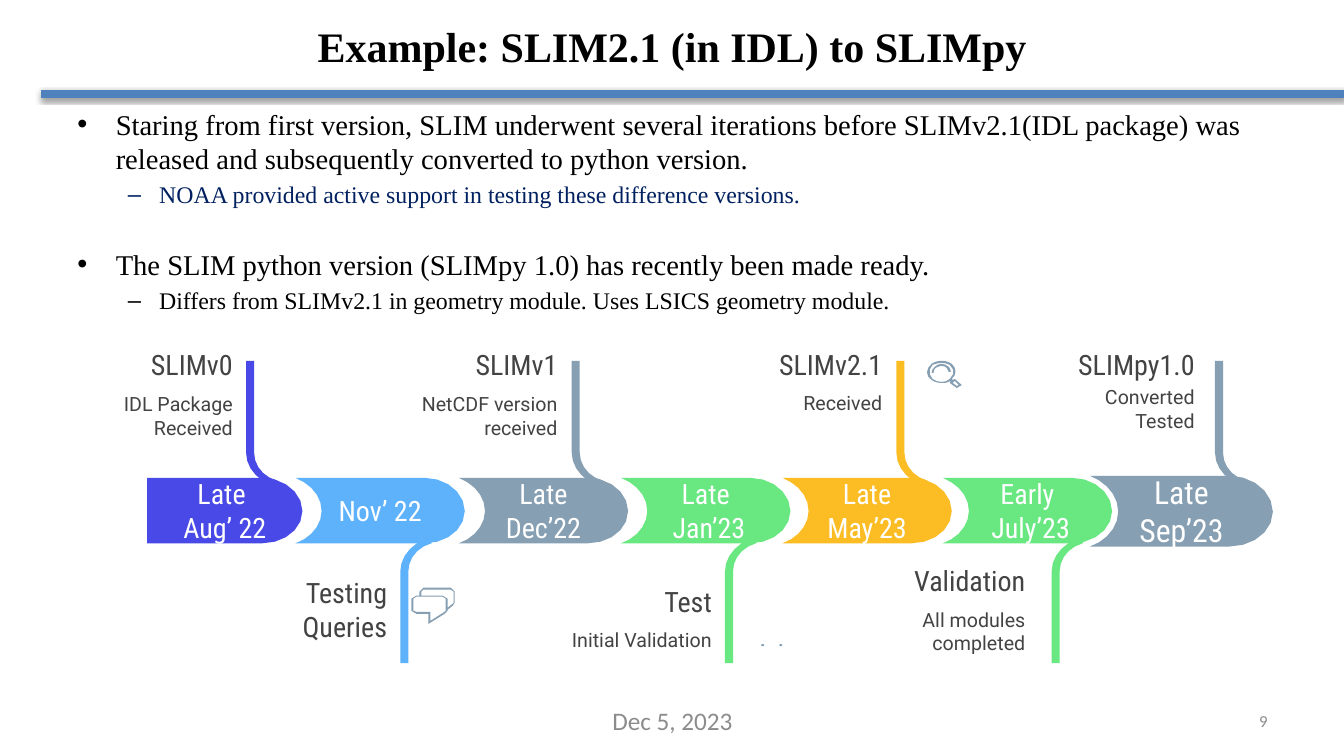
from math import dist

from lxml import etree
from pptx import Presentation
from pptx.dml.color import RGBColor
from pptx.enum.shapes import MSO_CONNECTOR, MSO_SHAPE
from pptx.enum.text import MSO_ANCHOR, PP_ALIGN
from pptx.oxml.ns import qn
from pptx.util import Inches, Pt

LEFT, MID, RIGHT = PP_ALIGN.LEFT, PP_ALIGN.CENTER, PP_ALIGN.RIGHT
TOP, CENTRE = MSO_ANCHOR.TOP, MSO_ANCHOR.MIDDLE
OVAL, LINE = MSO_SHAPE.OVAL, MSO_CONNECTOR.STRAIGHT
SERIF, SANS, SLIM = "Times New Roman", "Roboto", "Roboto Condensed"
SLATE, GREEN, DARK, GREY = "869FB2", "69E781", "434343", "8C8C8C"

# Outlines in inches: a pair is a corner, six numbers are a cubic curve
STEM = [(0, 0), (0, .91), (0, 1.05, .1, 1.17, .24, 1.23), (.31, 1.23),
        (.31, 1.19), (.17, 1.15, .08, 1.04, .08, .91), (.08, 0)]
NOTCH = [(0, 0), (.15, .06, .26, .18, .26, .33),
         (.26, .47, .15, .6, 0, .65)]
FLAT = [(.14, 0), (.14, .65)]
NOSE = [(1.28, .65), (1.5, .65, 1.68, .51, 1.68, .33),
        (1.68, .15, 1.5, 0, 1.28, 0)]
GLINT = [(.16, .03), (.13, .03, .11, .04, .09, .06),
         (.07, .07, .06, .1, .06, .12), (.08, .12),
         (.08, .1, .08, .08, .1, .07), (.12, .06, .14, .05, .16, .05),
         (.18, .05, .2, .06, .21, .07), (.23, .08, .23, .09, .23, .11),
         (.25, .11), (.25, .09, .24, .07, .23, .06),
         (.21, .04, .18, .03, .16, .03)]
LENS = [
    [(.16, .02), (.19, .02, .22, .03, .24, .04),
     (.29, .08, .29, .14, .24, .18), (.22, .2, .19, .21, .16, .21),
     (.13, .21, .1, .2, .07, .18), (.03, .14, .03, .08, .07, .04),
     (.1, .03, .13, .02, .16, .02)],
    [(.29, .2), (.33, .24), (.31, .25), (.27, .22)],
    [(.16, 0), (.12, 0, .09, .01, .06, .03), (0, .08, 0, .15, .06, .19),
     (.09, .21, .12, .22, .16, .22), (.19, .22, .22, .22, .25, .2),
     (.24, .22), (.31, .27), (.36, .24), (.29, .18), (.27, .19),
     (.26, .18), (.31, .14, .31, .07, .26, .03),
     (.23, .01, .2, 0, .16, 0)]]
CHAT = [
    [(.39, .02), (.42, .04), (.42, .15), (.41, .16), (.36, .2), (.36, .11),
     (.31, .08), (.1, .08), (.1, .04), (.12, .02)],
    [(.31, .09), (.34, .11), (.34, .23), (.33, .24), (.19, .33),
     (.19, .24), (.05, .24), (.02, .23), (.02, .11), (.05, .09)],
    [(.12, 0), (.08, .04), (.08, .08), (.05, .08), (0, .11), (0, .23),
     (.05, .26), (.17, .26), (.17, .36), (.33, .26), (.36, .23),
     (.36, .22), (.41, .18), (.43, .15), (.43, .04), (.39, 0)]]

# date, colour, band left, stem left, up, text right,
# heading, its top, note, its top
STEPS = [
    ("Late \nAug’ 22", "4949E7", 1.32, 2.44, True, 2.44,
     "SLIMv0", 3.38, "IDL Package Received", 3.76),
    ("Nov’ 22", "5EB2FC", 2.93, 3.97, False, 3.97,
     "Testing\nQueries", 5.81, "", 0),
    ("Late\nDec’22", SLATE, 4.55, 5.67, True, 5.66,
     "SLIMv1", 3.38, "NetCDF version received", 3.76),
    ("Late\n Jan’23", GREEN, 6.16, 7.19, False, 7.19,
     "Test", 5.73, "Initial Validation", 6.11),
    ("Late\nMay’23", "FCBD24", 7.76, 8.89, True, 8.88,
     "SLIMv2.1", 3.38, "Received", 3.76),
    ("Early\n July’23", GREEN, 9.35, 10.43, False, 10.3,
     "Validation", 5.52, "All modules completed", 5.9),
    ("Late\nSep’23", SLATE, 10.81, 12.05, True, 11.98,
     "SLIMpy1.0", 3.38, "Converted\nTested", 3.69)]

# text, size, colour, level, space before
BODY = [
    ("Staring from first version, SLIM underwent several iterations before "
     "SLIMv2.1(IDL package) was released and subsequently converted to "
     "python version.", 20.4, "000000", 0, 0),
    ("NOAA provided active support in testing these difference versions.",
     17, "002060", 1, 3.4),
    ("The SLIM python version (SLIMpy 1.0) has recently been made ready.",
     20.4, "000000", 0, 27),
    ("Differs from SLIMv2.1 in geometry module. Uses LSICS geometry module.",
     17, "000000", 1, 3.4)]


def paint(target, color):
    target.solid()
    target.fore_color.rgb = RGBColor.from_string(color)


def style(par, face, size, color, bold=False):
    for run in par.runs:
        run.font.name, run.font.size, run.font.bold = face, Pt(size), bold
        paint(run.font.fill, color)


def write(shape, text, face, size, color, align, anchor, pad=None, bold=False):
    frame = shape.text_frame
    frame.word_wrap, frame.vertical_anchor = True, anchor
    if pad is not None:
        frame.margin_left = frame.margin_right = Inches(pad)
        frame.margin_top = frame.margin_bottom = Inches(pad)
    frame.text = text
    for par in frame.paragraphs:
        par.alignment = align
        style(par, face, size, color, bold)


def label(slide, box, *args, **opts):
    write(slide.shapes.add_textbox(*map(Inches, box)), *args, **opts)


def finish(shape, color):
    shape.shadow.inherit = False
    paint(shape.fill, color)
    shape.line.fill.background()


def trace(parts):
    """Turn corners and cubic curves into points, more for longer curves."""
    points = []
    for part in parts:
        if len(part) == 2:
            points.append(part)
            continue
        start, ctrl = points[-1], (part[:2], part[2:4], part[4:])
        count = min(5, 1 + int(20 * dist(start, ctrl[2])))
        for step in range(1, count + 1):
            t = step / count
            u = 1 - t
            points.append(tuple(
                u**3 * start[k] + 3 * u * u * t * ctrl[0][k]
                + 3 * u * t * t * ctrl[1][k] + t**3 * ctrl[2][k]
                for k in (0, 1)))
    return points


def outline(slide, rings, left, top, color, wide=1, tall=1):
    pen = None
    for ring in rings:
        points = [(Inches(left + wide * x), Inches(top + tall * y))
                  for x, y in trace(ring)]
        if pen is None:
            pen = slide.shapes.build_freeform(*points[0])
        else:
            pen.move_to(*points[0])
        pen.add_line_segments(points[1:], close=True)
    shape = pen.convert_to_shape()
    finish(shape, color)
    return shape


def rule(slide):
    bar = slide.shapes.add_connector(
        LINE, Inches(.41), Inches(.93), Inches(13.33), Inches(.93))
    paint(bar.line.fill, "4F81BD")
    bar.line.width = Pt(6)
    glow = etree.SubElement(bar._element.spPr, qn("a:effectLst"))
    shade = etree.SubElement(glow, qn("a:outerShdw"), blurRad=str(Pt(3.1)),
                             dist=str(Pt(1.6)), dir="5400000", rotWithShape="0")
    tint = etree.SubElement(shade, qn("a:srgbClr"), val="000000")
    etree.SubElement(tint, qn("a:alpha"), val="38000")


def bullets(slide):
    box = slide.shapes.add_textbox(*map(Inches, (.67, 1.01, 12, 1.93)))
    frame = box.text_frame
    frame.word_wrap = True
    for i, (text, size, color, level, gap) in enumerate(BODY):
        par = frame.add_paragraph() if i else frame.paragraphs[0]
        par.text, par.level, par.alignment = text, level, LEFT
        props = par._p.get_or_add_pPr()
        props.set("marL", str(Inches((.38, .81)[level])))
        props.set("indent", str(Inches((-.38, -.31)[level])))
        etree.SubElement(props, qn("a:buFont"), typeface="Arial")
        etree.SubElement(props, qn("a:buChar"), char="•–"[level])
        par.space_before = Pt(gap)
        style(par, SERIF, size, color)


def stage(slide, first, last, step):
    date, color, left, stem, up, right, head, high, note, low = step
    size = 1.08 if last else 1
    band = outline(slide, [(FLAT if first else NOTCH) + NOSE], left,
                   4.72 if last else 4.74, color, size, size)
    write(band, date, SLIM, 22.7 if last else 20, "FFFFFF", MID, CENTRE, .13)
    outline(slide, [STEM], stem, 3.58 if up else 6.58, color,
            tall=1 if up else -1)
    width = 1.77 if up else 1.9
    label(slide, (right - width, high, width, .47), head, SLIM, 20, DARK,
          RIGHT, CENTRE, .13)
    if note:
        label(slide, (right - width, low, width, .59), note, SANS, 14, DARK,
              RIGHT, TOP, .13)


def main():
    deck = Presentation()
    deck.slide_width, deck.slide_height = Inches(13.33), Inches(7.5)
    slide = deck.slides.add_slide(deck.slide_layouts[6])
    # Heading and bullets
    rule(slide)
    label(slide, (.67, .07, 12, .77), "Example: SLIM2.1 (in IDL) to SLIMpy",
          SERIF, 30, "000000", MID, CENTRE, bold=True)
    bullets(slide)
    # Timeline
    for i, step in enumerate(STEPS):
        stage(slide, i == 0, i == len(STEPS) - 1, step)
    # Icons
    outline(slide, [GLINT], 9.18, 3.58, SLATE)
    outline(slide, LENS, 9.18, 3.58, SLATE)
    outline(slide, CHAT, 4.08, 5.83, SLATE)
    for left in (7.55, 7.73):
        dot = slide.shapes.add_shape(
            OVAL, *map(Inches, (left, 6.39, .03, .02)))
        finish(dot, SLATE)
    # Footer
    label(slide, (4.56, 6.95, 4.22, .4), "Dec 5, 2023", "Calibri", 18, GREY,
          MID, TOP)
    label(slide, (9.56, 6.95, 3.11, .4), "9", "Calibri", 12, GREY,
          RIGHT, CENTRE)
    deck.save("out.pptx")


if __name__ == "__main__":
    main()
